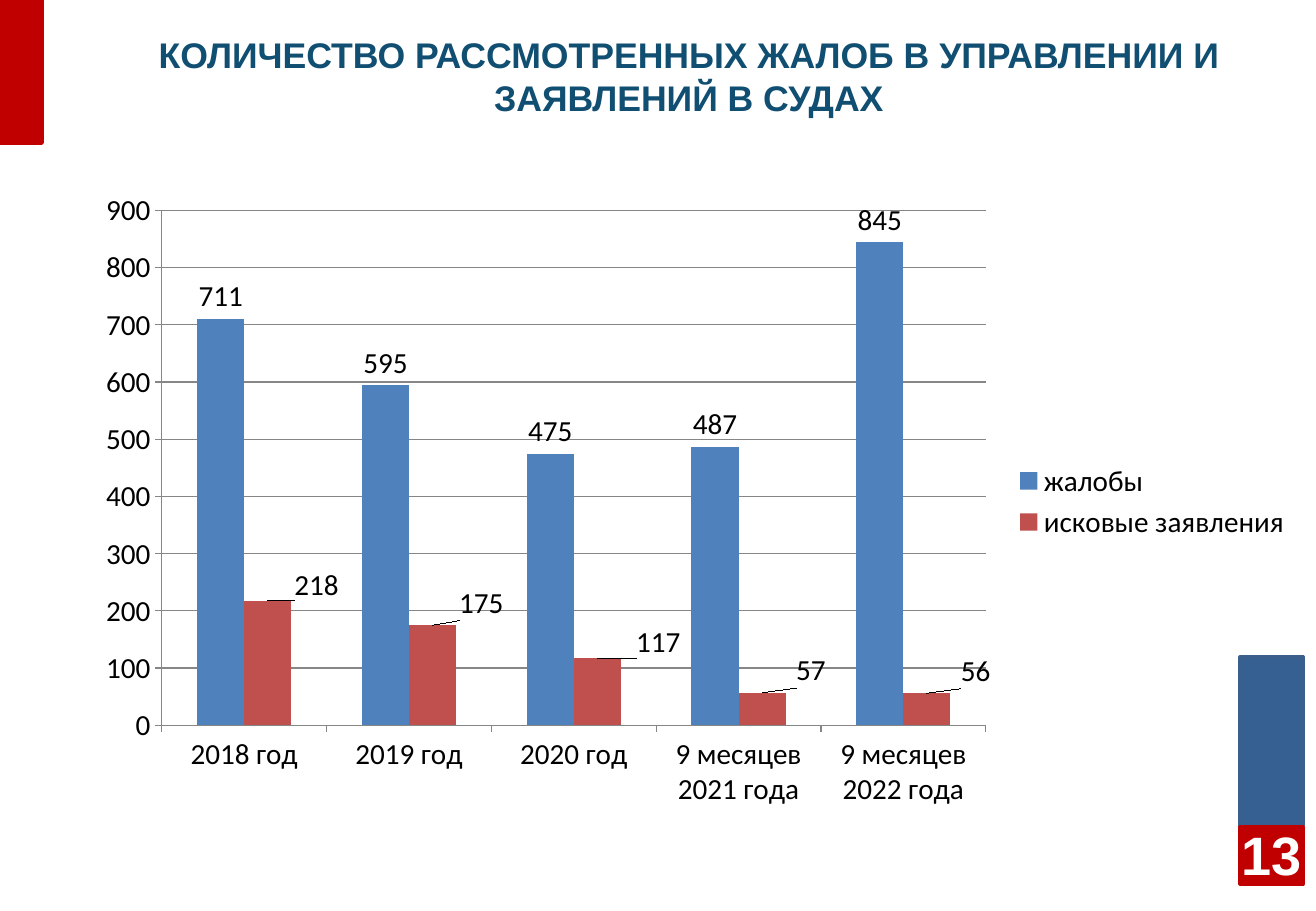
from lxml.etree import SubElement
from pptx import Presentation
from pptx.chart.data import CategoryChartData
from pptx.dml.color import RGBColor
from pptx.enum.chart import XL_CHART_TYPE as ChartType
from pptx.enum.chart import XL_LABEL_POSITION as LabelPosition
from pptx.enum.chart import XL_LEGEND_POSITION as LegendPosition
from pptx.enum.chart import XL_TICK_MARK as TickMark
from pptx.enum.shapes import MSO_SHAPE as Shape
from pptx.enum.text import MSO_ANCHOR as Anchor
from pptx.enum.text import PP_ALIGN as Align
from pptx.oxml.ns import qn
from pptx.util import Pt


def color(value):
    return RGBColor.from_string(value)


def add_layout(parent, position, **settings):
    layout = SubElement(parent, qn("c:layout"))
    manual = SubElement(layout, qn("c:manualLayout"))
    for name, value in settings.items():
        SubElement(manual, qn(f"c:{name}")).set("val", str(value))
    parent.insert(position, layout)


deck = Presentation()
deck.slide_width, deck.slide_height = Pt(812.9), Pt(563)
page = deck.slides.add_slide(deck.slide_layouts[5])

blocks = [
    (766, 406, 39, 104, "376092", "3A5F8C"),
    (766, 511, 39, 35.3, "C00000", "C00000"),
    (0, 0, 26, 88.5, "C00000", "C00000"),
]
for left, top, width, height, fill, line in blocks:
    block = page.shapes.add_shape(Shape.RECTANGLE, Pt(left), Pt(top), Pt(width), Pt(height))
    block.shadow.inherit = False
    block.fill.solid()
    block.fill.fore_color.rgb = color(fill)
    block.line.color.rgb = color(line)
    block.line.width = Pt(2)

title = page.shapes.title
title.left, title.top, title.width, title.height = Pt(51), Pt(9.4), Pt(749), Pt(75)
number = page.shapes.add_textbox(Pt(764.6), Pt(512.6), Pt(41.8), Pt(30.2))
texts = [
    (title, "КОЛИЧЕСТВО РАССМОТРЕННЫХ ЖАЛОБ В УПРАВЛЕНИИ И ЗАЯВЛЕНИЙ В СУДАХ", 22, "104E72"),
    (number, "13", 33.4, "FFFFFF"),
]
for box, text, size, shade in texts:
    frame = box.text_frame
    frame.text = text
    frame.word_wrap = True
    frame.vertical_anchor = Anchor.MIDDLE
    frame.margin_left = frame.margin_right = 0
    frame.margin_top = frame.margin_bottom = Pt(3.6)
    para = frame.paragraphs[0]
    para.alignment = Align.CENTER
    font = para.runs[0].font
    font.name, font.size, font.bold = "Arial", Pt(size), True
    font.color.rgb = color(shade)

data = CategoryChartData()
data.categories = ["2018 год", "2019 год", "2020 год", "9 месяцев 2021 года", "9 месяцев 2022 года"]
data.add_series("жалобы", [711, 595, 475, 487, 845])
data.add_series("исковые заявления", [218, 175, 117, 57, 56])
chart = page.shapes.add_chart(
    ChartType.COLUMN_CLUSTERED, Pt(51), Pt(112.3), Pt(754), Pt(395.3), data
).chart
chart.has_title = False
chart.font.name, chart.font.size = "Calibri", Pt(18)
chart.font.color.rgb = color("000000")
chart.has_legend = True
chart.legend.position = LegendPosition.RIGHT
chart.legend.include_in_layout = False

values = chart.value_axis
values.minimum_scale, values.maximum_scale, values.major_unit = 0, 900, 100
values.has_major_gridlines = True
for axis_line in (values.format.line, chart.category_axis.format.line, values.major_gridlines.format.line):
    axis_line.color.rgb = color("868686")
    axis_line.width = Pt(0.75)
for axis in (values, chart.category_axis):
    axis.major_tick_mark = TickMark.OUTSIDE
    axis.minor_tick_mark = TickMark.NONE

plot = chart.plots[0]
plot.gap_width, plot.overlap = 150, 0
plot.vary_by_categories = False
for series, shade in zip(plot.series, ["4F81BD", "C0504D"]):
    series.format.fill.solid()
    series.format.fill.fore_color.rgb = color(shade)
    series.data_labels.show_value = True
    series.data_labels.position = LabelPosition.OUTSIDE_END

claims = plot.series[1]
label_shifts = [(0.04, 0.01), (0.04, 0), (0.05, 0.01), (0.04, 0), (0.04, 0)]
for index, (across, down) in enumerate(label_shifts):
    claims.points[index].data_label.position = LabelPosition.OUTSIDE_END
    label = claims.data_labels._element.findall(qn("c:dLbl"))[index]
    add_layout(label, 1, x=across, y=down)

plot_area = chart._chartSpace.chart.plotArea
for old_layout in plot_area.findall(qn("c:layout")):
    plot_area.remove(old_layout)
add_layout(
    plot_area, 0, layoutTarget="inner", xMode="edge", yMode="edge",
    x=0.065, y=0.045, w=0.675, h=0.805,
)

deck.save("out.pptx")
